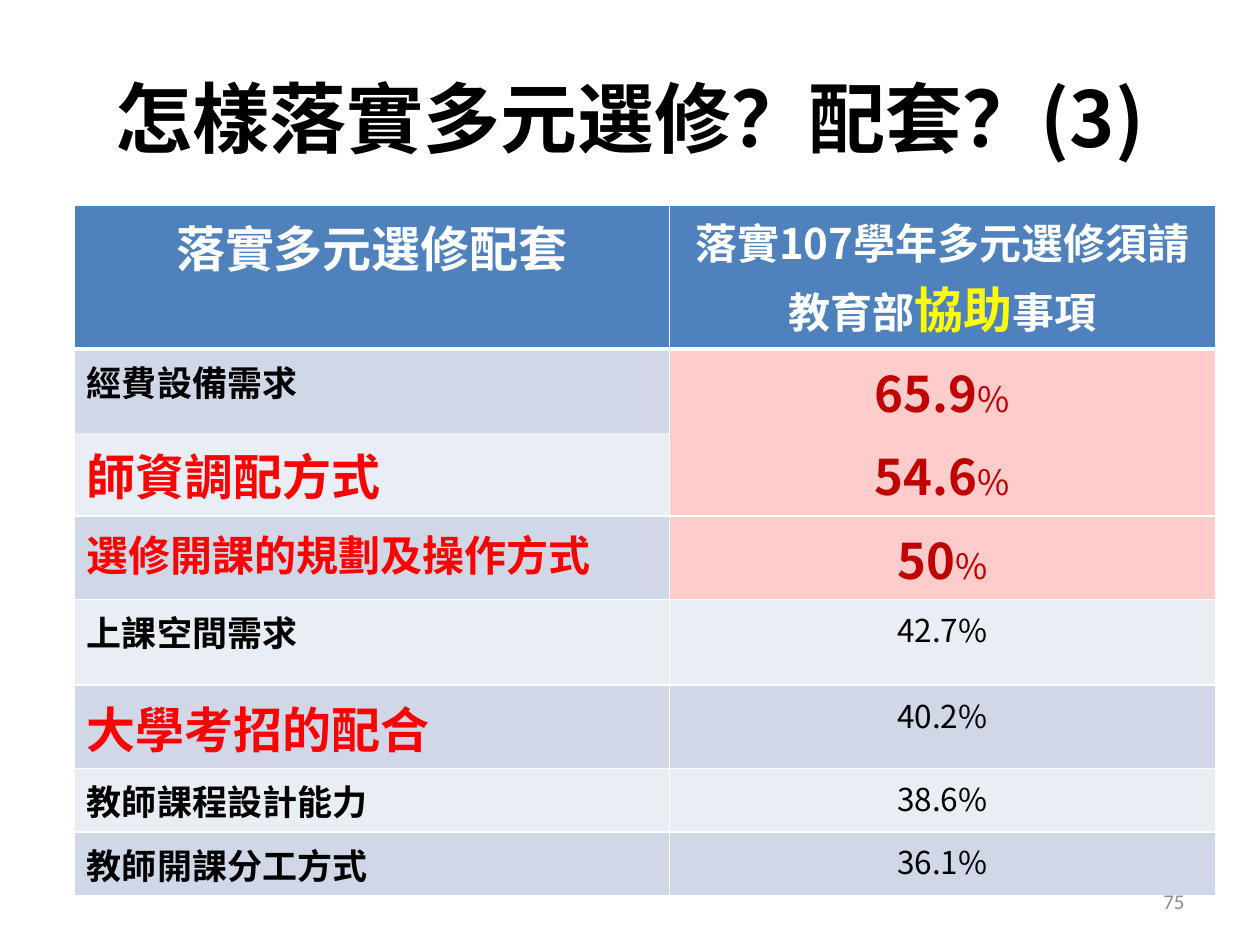
from lxml.etree import SubElement
from pptx import Presentation
from pptx.dml.color import RGBColor
from pptx.enum.text import MSO_ANCHOR as Anchor, PP_ALIGN as Align
from pptx.oxml.ns import qn
from pptx.util import Pt

CJK = "Noto Sans CJK SC"
BLACK, WHITE, RED, CRIMSON, YELLOW = "000000", "FFFFFF", "FF0000", "C00000", "FFFF00"
HEADER, BAND_DARK, BAND_LIGHT, PINK = "4F81BD", "D0D8E8", "E9EDF4", "FFCCCC"

COLUMN_WIDTHS = [340, 312]
ROW_HEIGHTS = [69, 42, 47.5, 42, 49, 47.5, 36, 36]
# measure, size, colour, share in percent, highlighted
MEASURES = [
    ("經費設備需求", 20, BLACK, "65.9", True),
    ("師資調配方式", 28, RED, "54.6", True),
    ("選修開課的規劃及操作方式", 24, RED, "50", True),
    ("上課空間需求", 20, BLACK, "42.7", False),
    ("大學考招的配合", 28, RED, "40.2", False),
    ("教師課程設計能力", 20, BLACK, "38.6", False),
    ("教師開課分工方式", 20, BLACK, "36.1", False),
]


def rgb(code):
    return RGBColor.from_string(code)


def add_run(paragraph, text, size, color, bold=True, face=CJK):
    run = paragraph.add_run()
    run.text = text
    font = run.font
    font.size, font.bold, font.name = Pt(size), bold, face
    font.color.rgb = rgb(color)
    SubElement(run._r.get_or_add_rPr(), qn("a:ea"), typeface=face)


def add_borders(cell, top, bottom):
    """Draw white cell edges; a width of 0 leaves that edge open."""
    properties = cell._tc.get_or_add_tcPr()
    for side, width in (("L", 1), ("R", 1), ("T", top), ("B", bottom)):
        edge = SubElement(properties, qn(f"a:ln{side}"), w=str(Pt(width)))
        if width:
            color = SubElement(edge, qn("a:solidFill"))
            SubElement(color, qn("a:srgbClr"), val=WHITE)
        else:
            SubElement(edge, qn("a:noFill"))


def fill_cell(cell, runs, fill, edges, align=Align.CENTER):
    add_borders(cell, *edges)
    cell.fill.solid()
    cell.fill.fore_color.rgb = rgb(fill)
    paragraph = cell.text_frame.paragraphs[0]
    paragraph.alignment = align
    for run in runs:
        add_run(paragraph, *run)


def add_title(slide):
    title = slide.shapes.title
    title.left, title.top, title.width, title.height = Pt(36), Pt(21.6), Pt(648), Pt(90)
    title.text_frame.vertical_anchor = Anchor.MIDDLE
    paragraph = title.text_frame.paragraphs[0]
    paragraph.alignment = Align.CENTER
    add_run(paragraph, "怎樣落實多元選修？配套？(3)", 44, BLACK)


def add_measures_table(slide):
    table = slide.shapes.add_table(
        len(ROW_HEIGHTS), len(COLUMN_WIDTHS), Pt(42.5), Pt(117),
        Pt(sum(COLUMN_WIDTHS)), Pt(sum(ROW_HEIGHTS))).table
    for column, width in zip(table.columns, COLUMN_WIDTHS):
        column.width = Pt(width)
    for row, height in zip(table.rows, ROW_HEIGHTS):
        row.height = Pt(height)

    fill_cell(table.cell(0, 0), [("落實多元選修配套", 28, WHITE)], HEADER, (1, 3))
    fill_cell(table.cell(0, 1), [("落實107學年多元選修須請教育部", 24, WHITE),
                                 ("協助", 28, YELLOW), ("事項", 24, WHITE)], HEADER, (1, 3))

    for row, (measure, size, color, share, highlighted) in enumerate(MEASURES, 1):
        band = BAND_DARK if row % 2 else BAND_LIGHT
        # The first two measures share an open edge.
        edges = {1: (3, 0), 2: (0, 1)}.get(row, (1, 1))
        fill_cell(table.cell(row, 0), [(measure, size, color)], band, edges, Align.LEFT)
        if highlighted:
            share_runs = [(share, 28, CRIMSON), ("%", 20, CRIMSON, False)]
        else:
            share_runs = [(share + "%", 18, BLACK, False)]
        fill_cell(table.cell(row, 1), share_runs, PINK if highlighted else band, edges)


def add_page_number(slide):
    frame = slide.shapes.add_textbox(Pt(516), Pt(500.5), Pt(168), Pt(28.8)).text_frame
    frame.word_wrap = True
    frame.vertical_anchor = Anchor.MIDDLE
    paragraph = frame.paragraphs[0]
    paragraph.alignment = Align.RIGHT
    add_run(paragraph, "75", 12, "8C8C8C", False, "Calibri")


def main():
    deck = Presentation()
    deck.slide_width, deck.slide_height = Pt(720), Pt(540)
    slide = deck.slides.add_slide(deck.slide_layouts[5])
    add_title(slide)
    add_measures_table(slide)
    add_page_number(slide)
    deck.save("out.pptx")


if __name__ == "__main__":
    main()
